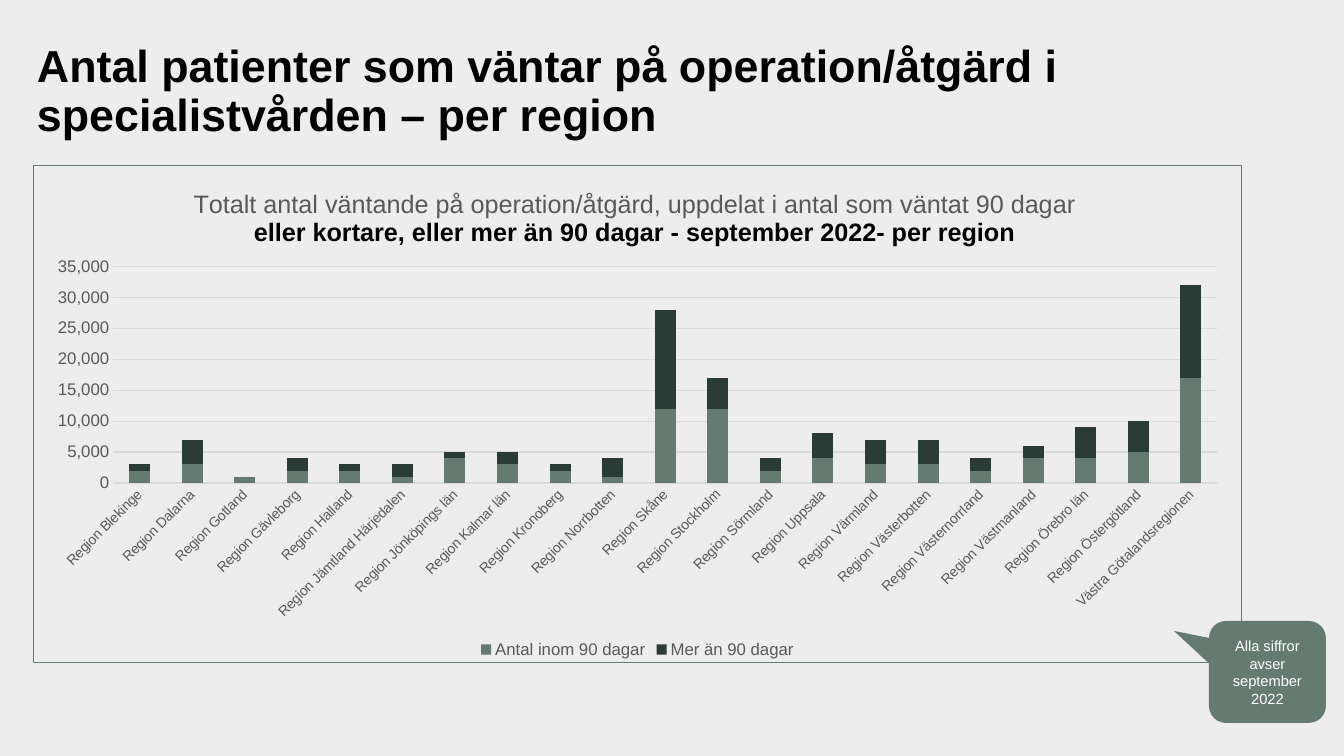
from lxml.etree import SubElement, fromstring
from pptx import Presentation
from pptx.chart.data import CategoryChartData
from pptx.dml.color import RGBColor
from pptx.enum.chart import XL_CHART_TYPE, XL_LEGEND_POSITION, XL_TICK_MARK
from pptx.enum.shapes import MSO_SHAPE
from pptx.enum.text import MSO_ANCHOR, PP_ALIGN
from pptx.oxml.ns import qn
from pptx.util import Emu, Pt

PAPER = RGBColor(0xED, 0xED, 0xED)
BLACK = RGBColor(0, 0, 0)
WHITE = RGBColor(255, 255, 255)
GREY = RGBColor(0x59, 0x59, 0x59)
GRID = RGBColor(0xD9, 0xD9, 0xD9)
SAGE = RGBColor(0x65, 0x7B, 0x71)
DARK = RGBColor(0x2A, 0x3B, 0x36)
NS = "http://schemas.openxmlformats.org/drawingml/2006/"

# Patients waiting per region: within 90 days, more than 90 days
WAITS = {
    "Region Blekinge": (2000, 1000),
    "Region Dalarna": (3000, 4000),
    "Region Gotland": (1000, 0),
    "Region Gävleborg": (2000, 2000),
    "Region Halland": (2000, 1000),
    "Region Jämtland Härjedalen": (1000, 2000),
    "Region Jönköpings län": (4000, 1000),
    "Region Kalmar län": (3000, 2000),
    "Region Kronoberg": (2000, 1000),
    "Region Norrbotten": (1000, 3000),
    "Region Skåne": (12000, 16000),
    "Region Stockholm": (12000, 5000),
    "Region Sörmland": (2000, 2000),
    "Region Uppsala": (4000, 4000),
    "Region Värmland": (3000, 4000),
    "Region Västerbotten": (3000, 4000),
    "Region Västernorrland": (2000, 2000),
    "Region Västmanland": (4000, 2000),
    "Region Örebro län": (4000, 5000),
    "Region Östergötland": (5000, 5000),
    "Västra Götalandsregionen": (17000, 15000),
}
GROUPS = {"Antal inom 90 dagar": SAGE, "Mer än 90 dagar": DARK}
HEADS = (
    ("Totalt antal väntande på operation/åtgärd, uppdelat i antal som väntat 90 dagar",
     GREY, False),
    ("eller kortare, eller mer än 90 dagar - september 2022- per region", BLACK, True),
)


def px(num):
    return Emu(round(num * 914400 / 100.8))


def style(item, **form):
    for key, val in form.items():
        setattr(item, key, val)


def ink(font, size, color, bold=False):
    style(font, name="Arial", size=Pt(size), bold=bold)
    font.color.rgb = color


def rule(line, color):
    line.color.rgb = color
    line.width = Pt(0.75)


def place(node, spot, **parts):
    """Give a chart part a fixed place, in shares of the chart."""
    for old in node.findall(qn("c:layout")):
        node.remove(old)
    lay = node.makeelement(qn("c:layout"), {})
    node.insert(spot, lay)
    man = SubElement(lay, qn("c:manualLayout"))
    for tag, val in parts.items():
        SubElement(man, qn("c:" + tag), val=str(val))


def add_title(slide, box):
    frame = slide.shapes.add_textbox(*map(px, box)).text_frame
    style(frame, word_wrap=True, vertical_anchor=MSO_ANCHOR.BOTTOM,
          margin_left=0, margin_right=0, margin_top=0, margin_bottom=0)
    para = frame.paragraphs[0]
    para.text = "Antal patienter som väntar på operation/åtgärd i specialistvården – per region"
    para.line_spacing = 0.9
    ink(para.font, 32, BLACK, True)


def add_bars(slide, box):
    data = CategoryChartData()
    data.categories = list(WAITS)
    for name, vals in zip(GROUPS, zip(*WAITS.values())):
        data.add_series(name, vals)
    chart = slide.shapes.add_chart(
        XL_CHART_TYPE.COLUMN_STACKED, *map(px, box), data).chart
    ink(chart.font, 10, BLACK)

    # Columns
    plot = chart.plots[0]
    style(plot, gap_width=150, overlap=100, vary_by_categories=False)
    for bar, color in zip(plot.series, GROUPS.values()):
        bar.format.fill.solid()
        bar.format.fill.fore_color.rgb = color

    # Axes
    cat, val = chart.category_axis, chart.value_axis
    for axis, size in ((cat, 10), (val, 12)):
        style(axis, major_tick_mark=XL_TICK_MARK.NONE, minor_tick_mark=XL_TICK_MARK.NONE)
        ink(axis.tick_labels.font, size, GREY)
    rule(cat.format.line, GRID)
    turn = cat._element.find(qn("c:txPr")).find(qn("a:bodyPr"))
    turn.set("rot", "-2700000")
    turn.set("vert", "horz")
    style(val, minimum_scale=0, maximum_scale=35000, major_unit=5000,
          has_major_gridlines=True)
    style(val.tick_labels, number_format="#,##0", number_format_is_linked=False)
    rule(val.major_gridlines.format.line, GRID)
    val.format.line.fill.background()

    # Chart title
    chart.has_title = True
    frame = chart.chart_title.text_frame
    for spot, (text, color, bold) in enumerate(HEADS):
        para = frame.add_paragraph() if spot else frame.paragraphs[0]
        para.alignment = PP_ALIGN.CENTER
        run = para.add_run()
        run.text = text
        ink(run.font, 18, color, bold)
    place(chart.chart_title._element, 1, xMode="edge", yMode="edge", x=0.13, y=0.04)

    # Legend, plot area and frame
    chart.has_legend = True
    style(chart.legend, position=XL_LEGEND_POSITION.BOTTOM, include_in_layout=False)
    ink(chart.legend.font, 12, GREY)
    space = chart._chartSpace
    area = space.find(qn("c:chart")).find(qn("c:plotArea"))
    left, top, wide, high = box
    place(area, 0, layoutTarget="inner", xMode="edge", yMode="edge",
          x=round(80 / wide, 3), y=round(101 / high, 3),
          w=round(1105 / wide, 3), h=round(217 / high, 3))
    space.find(qn("c:txPr")).addprevious(fromstring(
        f'<c:spPr xmlns:c="{NS}chart" xmlns:a="{NS}main"><a:noFill/>'
        f'<a:ln w="{Pt(0.75)}"><a:solidFill><a:srgbClr val="{SAGE}"/></a:solidFill>'
        '</a:ln></c:spPr>'))


def add_note(slide, box):
    note = slide.shapes.add_shape(MSO_SHAPE.ROUNDED_RECTANGULAR_CALLOUT, *map(px, box))
    note.shadow.inherit = False
    for spot, val in enumerate((-0.8, -0.403, 0.167)):
        note.adjustments[spot] = val
    note.fill.solid()
    note.fill.fore_color.rgb = SAGE
    note.line.fill.background()
    frame = note.text_frame
    style(frame, word_wrap=True, vertical_anchor=MSO_ANCHOR.MIDDLE)
    frame.text = "Alla siffror avser\nseptember 2022"
    for para in frame.paragraphs:
        para.alignment = PP_ALIGN.CENTER
        ink(para.font, 10.5, WHITE)


def main():
    deck = Presentation()
    style(deck, slide_width=px(1344), slide_height=px(756))
    slide = deck.slides.add_slide(deck.slide_layouts[6])
    slide.background.fill.solid()
    slide.background.fill.fore_color.rgb = PAPER
    add_bars(slide, (33, 165, 1209, 498))
    add_title(slide, (37, 19, 1098, 122))
    add_note(slide, (1209, 621, 117, 102))
    deck.save("out.pptx")


if __name__ == "__main__":
    main()
